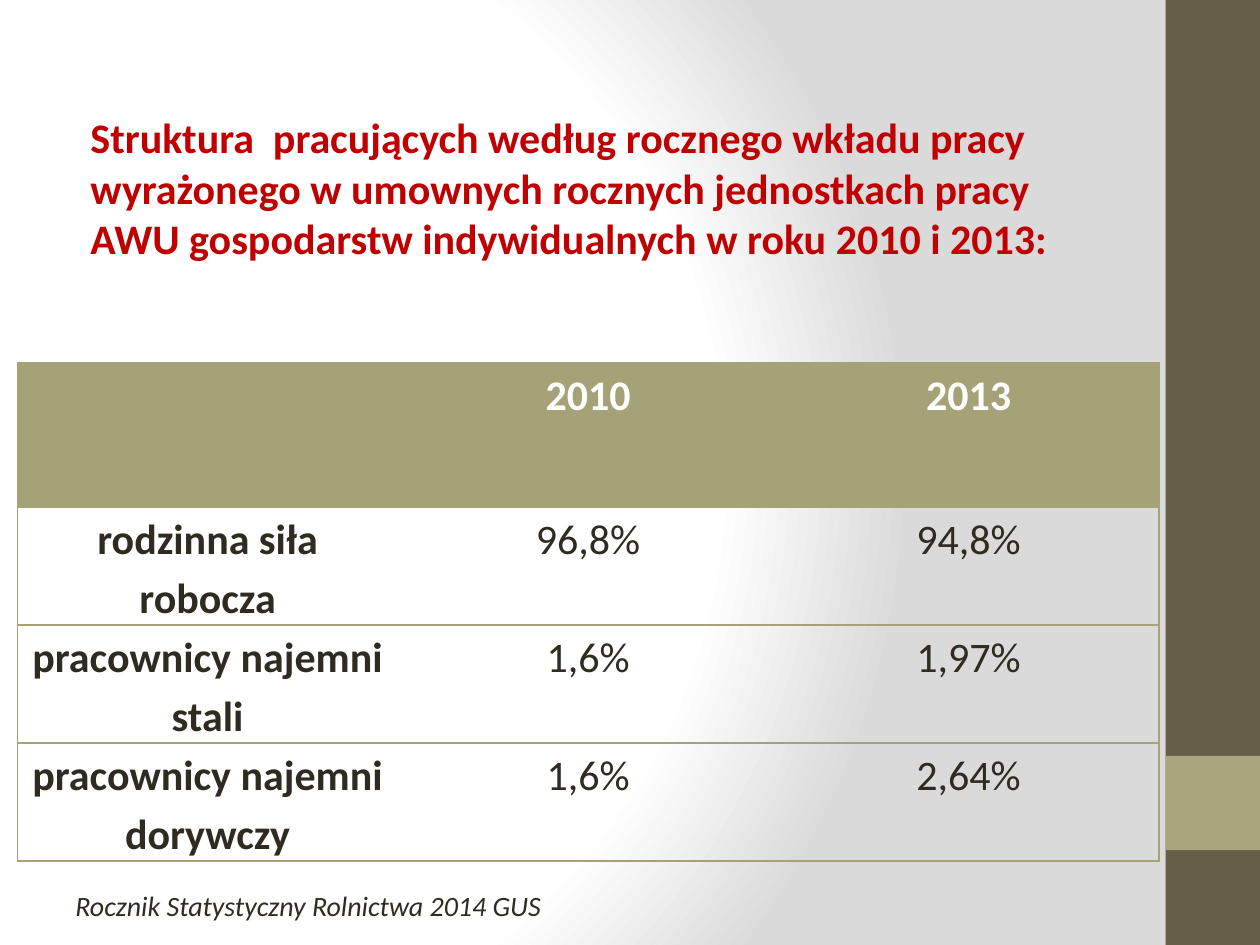
from pptx import Presentation
from pptx.dml.color import RGBColor
from pptx.enum.shapes import MSO_SHAPE
from pptx.enum.text import MSO_ANCHOR, MSO_AUTO_SIZE, PP_ALIGN
from pptx.oxml import parse_xml
from pptx.oxml.ns import nsdecls
from pptx.util import Cm, Pt

COLORS = {
    "bar": "675E47", "accent": "A9A57C", "table": "A6A278", "title": "C00000",
    "text": "2F2B20", "white": "FFFFFF", "grey": "DADADA",
}
TITLE = ("Struktura  pracujących według rocznego wkładu pracy wyrażonego "
         "w umownych rocznych jednostkach pracy AWU gospodarstw "
         "indywidualnych w roku 2010 i 2013:")
SOURCE = "Rocznik Statystyczny Rolnictwa 2014 GUS"
ROWS = [
    ("", "2010", "2013"),
    ("rodzinna siła robocza", "96,8%", "94,8%"),
    ("pracownicy najemni stali", "1,6%", "1,97%"),
    ("pracownicy najemni dorywczy", "1,6%", "2,64%"),
]


def rgb(name):
    return RGBColor.from_string(COLORS[name])


def style_font(para, size, color, bold=False, italic=False):
    font = para.font
    font.name, font.size = "Calibri", Pt(size)
    font.bold, font.italic = bold, italic
    font.color.rgb = rgb(color)


def set_background(page):
    stops = "".join(
        f'<a:gs pos="{pos * 1000}"><a:srgbClr val="{COLORS[name]}"/></a:gs>'
        for pos, name in ((0, "white"), (75, "white"), (100, "grey")))
    page.element.cSld.insert(0, parse_xml(
        f'<p:bg {nsdecls("p", "a")}><p:bgPr><a:gradFill rotWithShape="1">'
        f'<a:gsLst>{stops}</a:gsLst><a:path path="circle">'
        '<a:fillToRect l="20000" t="50000" r="100000" b="50000"/></a:path>'
        '</a:gradFill><a:effectLst/></p:bgPr></p:bg>'))


def add_block(page, top, height, color):
    block = page.shapes.add_shape(
        MSO_SHAPE.RECTANGLE, Cm(23.5), Cm(top), Cm(1.9), Cm(height))
    block.shadow.inherit = False
    block.fill.solid()
    block.fill.fore_color.rgb = rgb(color)
    block.line.fill.background()


def place_title(page):
    box = page.shapes.title
    box.left, box.top, box.width, box.height = Cm(1.27), Cm(2.13), Cm(21.16), Cm(13.34)
    frame = box.text_frame
    frame.text = TITLE
    frame.auto_size = MSO_AUTO_SIZE.NONE
    frame.vertical_anchor = MSO_ANCHOR.TOP
    para = frame.paragraphs[0]
    para.alignment = PP_ALIGN.LEFT
    para._p.get_or_add_pPr().set("marL", str(Cm(0.3)))
    style_font(para, 24, "title", bold=True)


def set_borders(cell, visible):
    """Draw the named sides (L, R, T, B) and clear the others."""
    for index, side in enumerate("LRTB"):
        fill = (f'<a:solidFill><a:srgbClr val="{COLORS["table"]}"/></a:solidFill>'
                if side in visible else "<a:noFill/>")
        cell._tc.get_or_add_tcPr().insert(index, parse_xml(
            f'<a:ln{side} {nsdecls("a")} w="{Pt(1)}">{fill}</a:ln{side}>'))


def fill_cell(cell, text, header, bold):
    cell.margin_left = cell.margin_right = Cm(0.18)
    cell.margin_top = cell.margin_bottom = 0
    cell.text = text
    para = cell.text_frame.paragraphs[0]
    para.alignment = PP_ALIGN.CENTER
    para.line_spacing = 1.15
    style_font(para, 24, "white" if header else "text", bold=bold)
    if header:
        cell.fill.solid()
        cell.fill.fore_color.rgb = rgb("table")
    else:
        cell.fill.background()


def add_workforce_table(page):
    columns = len(ROWS[0])
    table = page.shapes.add_table(
        len(ROWS), columns, Cm(0.35), Cm(7.32), Cm(23.01), Cm(10.04)).table
    for column in table.columns:
        column.width = Cm(7.67)
    for r, values in enumerate(ROWS):
        table.rows[r].height = Cm(2.9 if r == 0 else 2.38)
        for c, text in enumerate(values):
            cell = table.cell(r, c)
            fill_cell(cell, text, header=r == 0, bold=r == 0 or c == 0)
            outer = {0: "L", columns - 1: "R"}.get(c, "")
            set_borders(cell, "TB" + outer)


def add_source_note(page):
    box = page.shapes.add_textbox(Cm(1.27), Cm(17.78), Cm(21.16), Cm(1.24))
    box.text_frame.word_wrap = True
    para = box.text_frame.paragraphs[0]
    para.text = SOURCE
    para.space_after = Pt(6)
    style_font(para, 16, "text", italic=True)


def main():
    deck = Presentation()
    deck.slide_width, deck.slide_height = Cm(25.4), Cm(19.05)
    page = deck.slides.add_slide(deck.slide_layouts[5])
    set_background(page)
    # Side bar with its accent square
    add_block(page, 0, 19.05, "bar")
    add_block(page, 15.24, 1.9, "accent")
    # Content
    place_title(page)
    add_workforce_table(page)
    add_source_note(page)
    deck.save("out.pptx")


if __name__ == "__main__":
    main()
